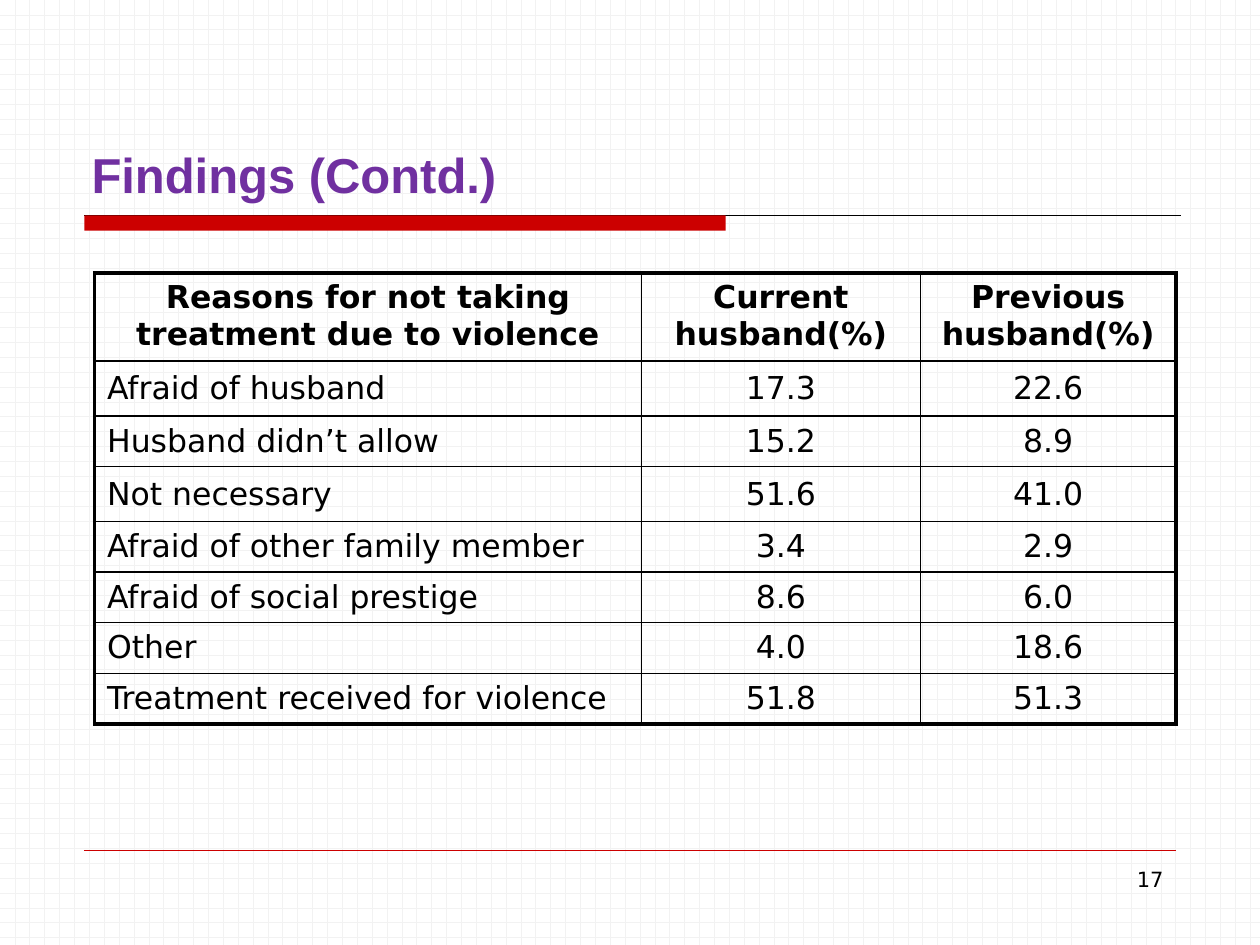
from dataclasses import dataclass

from lxml import etree
from pptx import Presentation
from pptx.dml.color import RGBColor
from pptx.enum.dml import MSO_PATTERN
from pptx.enum.shapes import MSO_CONNECTOR, MSO_SHAPE
from pptx.enum.text import MSO_ANCHOR, PP_ALIGN
from pptx.oxml.ns import qn
from pptx.util import Pt

BRICK = MSO_PATTERN.HORIZONTAL_BRICK
STRAIGHT = MSO_CONNECTOR.STRAIGHT
RECTANGLE = MSO_SHAPE.RECTANGLE
TOP, MIDDLE, BOTTOM = MSO_ANCHOR.TOP, MSO_ANCHOR.MIDDLE, MSO_ANCHOR.BOTTOM
LEFT, CENTER, RIGHT = PP_ALIGN.LEFT, PP_ALIGN.CENTER, PP_ALIGN.RIGHT


@dataclass(frozen=True)
class Theme:
    paper: str = "FFFFFF"
    grid: str = "F2F2F2"
    ink: str = "000000"
    accent: str = "CC0000"
    heading: str = "7030A0"
    heading_font: str = "Arial"
    body_font: str = "DejaVu Sans"
    heading_size: float = 28
    table_size: float = 18
    number_size: float = 12
    outer_border: float = 2.25
    inner_border: float = 1


THEME = Theme()

COLUMN_WIDTHS = [312.5, 159.5, 146]
HEADER_HEIGHT, TALL_ROW, SHORT_ROW = 50.3, 31.4, 28.9
ROW_HEIGHTS = [HEADER_HEIGHT, TALL_ROW, SHORT_ROW, TALL_ROW] + [SHORT_ROW] * 4
FINDINGS = [
    ("Reasons for not taking treatment due to violence", "Current husband(%)", "Previous husband(%)"),
    ("Afraid of husband", "17.3", "22.6"),
    ("Husband didn’t allow", "15.2", "8.9"),
    ("Not necessary", "51.6", "41.0"),
    ("Afraid of other family member", "3.4", "2.9"),
    ("Afraid of social prestige", "8.6", "6.0"),
    ("Other", "4.0", "18.6"),
    ("Treatment received for violence", "51.8", "51.3"),
]


def write_text(frame, text, *, size, font=THEME.body_font, color=THEME.ink,
               bold=False, align=LEFT, anchor=TOP):
    frame.word_wrap = True
    frame.vertical_anchor = anchor
    paragraph = frame.paragraphs[0]
    paragraph.alignment = align
    run = paragraph.add_run()
    run.text = text
    run.font.size = Pt(size)
    run.font.name = font
    run.font.bold = bold
    run.font.color.rgb = RGBColor.from_string(color)


def add_text_box(slide, box, text, **text_format):
    shape = slide.shapes.add_textbox(*map(Pt, box))
    write_text(shape.text_frame, text, **text_format)


def add_rule(slide, left, top, width, color, weight):
    connector = slide.shapes.add_connector(
        STRAIGHT, Pt(left), Pt(top), Pt(left + width), Pt(top))
    connector.line.color.rgb = RGBColor.from_string(color)
    connector.line.width = Pt(weight)
    properties = connector._element.find(qn("p:spPr"))
    etree.SubElement(properties, qn("a:effectLst"))


def set_borders(cell, weights):
    properties = cell._tc.get_or_add_tcPr()
    for position, (side, weight) in enumerate(weights.items()):
        line = etree.Element(qn(f"a:ln{side}"), w=str(int(Pt(weight))))
        fill = etree.SubElement(line, qn("a:solidFill"))
        etree.SubElement(fill, qn("a:srgbClr"), val=THEME.ink)
        properties.insert(position, line)


def add_background(slide):
    fill = slide.background.fill
    fill.patterned()
    fill.pattern = BRICK
    fill.fore_color.rgb = RGBColor.from_string(THEME.grid)
    fill.back_color.rgb = RGBColor.from_string(THEME.paper)


def add_heading(slide, box, text):
    left, top, width, height = box
    bar_left, bar_top = left + 3, top + height + 3.6
    add_rule(slide, bar_left, bar_top, width - 3.6, THEME.ink, 0.75)
    bar = slide.shapes.add_shape(
        RECTANGLE, Pt(bar_left), Pt(bar_top), Pt(366.5), Pt(8.8))
    bar.shadow.inherit = False
    bar.fill.solid()
    bar.fill.fore_color.rgb = RGBColor.from_string(THEME.accent)
    bar.line.fill.background()
    add_text_box(slide, box, text, size=THEME.heading_size, font=THEME.heading_font,
                 color=THEME.heading, bold=True, anchor=BOTTOM)


def add_findings_table(slide, left, top):
    row_count, column_count = len(FINDINGS), len(COLUMN_WIDTHS)
    frame = slide.shapes.add_table(
        row_count, column_count, Pt(left), Pt(top),
        Pt(sum(COLUMN_WIDTHS)), Pt(sum(ROW_HEIGHTS)))
    table = frame.table
    table.first_row = table.horz_banding = False
    for column, width in zip(table.columns, COLUMN_WIDTHS):
        column.width = Pt(width)
    for row_index, values in enumerate(FINDINGS):
        table.rows[row_index].height = Pt(ROW_HEIGHTS[row_index])
        is_header = row_index == 0
        for column_index, value in enumerate(values):
            cell = table.cell(row_index, column_index)
            cell.fill.background()
            outer_sides = {
                "L": column_index == 0,
                "R": column_index == column_count - 1,
                "T": is_header,
                "B": row_index == row_count - 1,
            }
            set_borders(cell, {
                side: THEME.outer_border if is_outer else THEME.inner_border
                for side, is_outer in outer_sides.items()})
            write_text(cell.text_frame, value, size=THEME.table_size, bold=is_header,
                       align=CENTER if is_header or column_index else LEFT)
            cell.vertical_anchor = TOP if is_header else MIDDLE


def add_footer(slide, box, number):
    left, top, width, height = box
    add_rule(slide, left, top, width, THEME.accent, 0.25)
    number_width = 156
    add_text_box(slide, (left + width - number_width, top + 5.8, number_width, height),
                 number, size=THEME.number_size, align=RIGHT)


def main():
    presentation = Presentation()
    presentation.slide_width, presentation.slide_height = Pt(720), Pt(540)
    slide = presentation.slides.add_slide(presentation.slide_layouts[6])
    add_background(slide)
    add_heading(slide, (45.2, 78.5, 630, 41), "Findings (Contd.)")
    add_findings_table(slide, 54, 156)
    add_footer(slide, (48, 486, 624, 37.5), "17")
    presentation.save("out.pptx")


if __name__ == "__main__":
    main()
